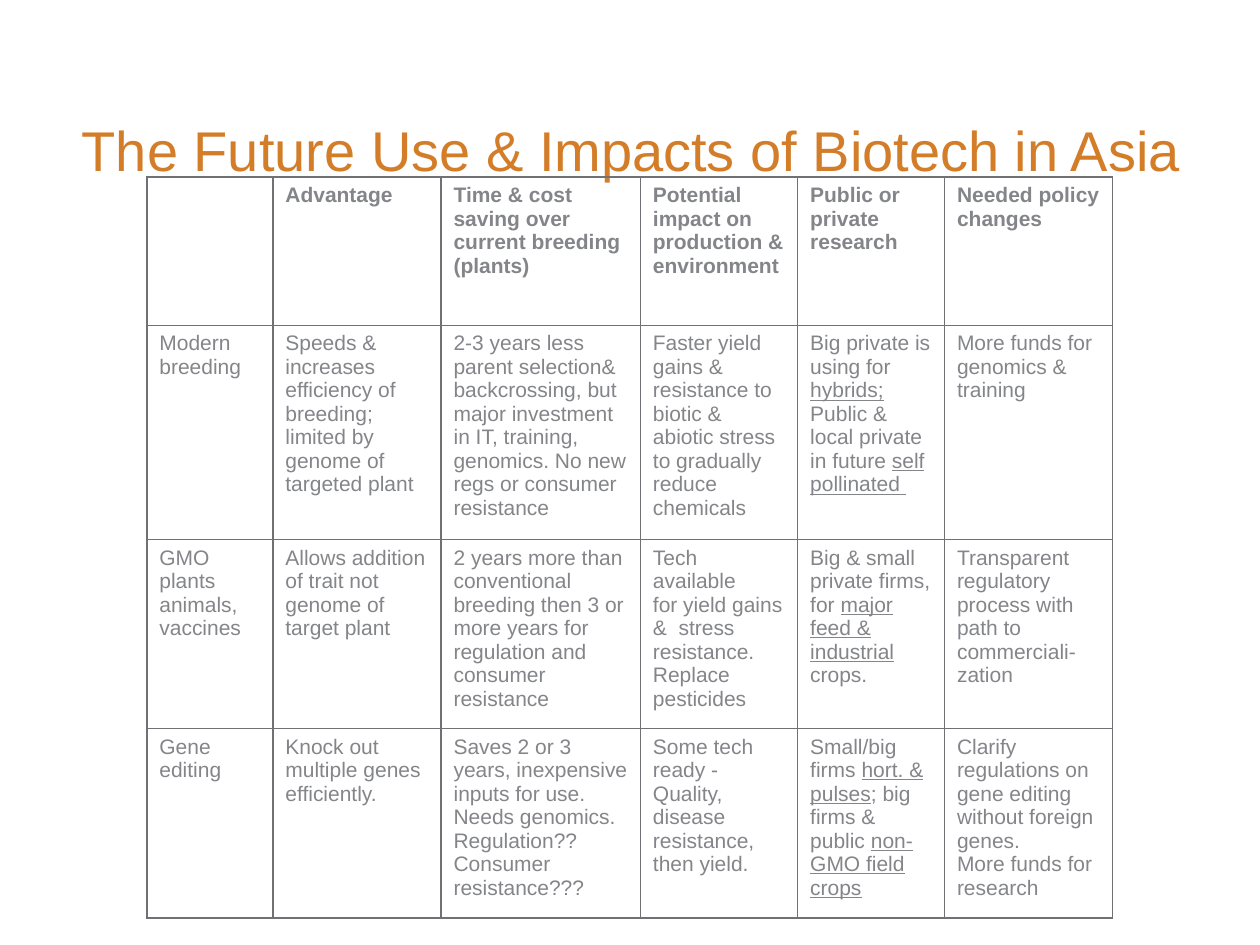
from pptx import Presentation
from pptx.dml.color import RGBColor
from pptx.enum.text import MSO_ANCHOR
from pptx.oxml import parse_xml
from pptx.oxml.ns import nsdecls
from pptx.util import Cm, Pt

MIDDLE = MSO_ANCHOR.MIDDLE
ORANGE = RGBColor(0xD3, 0x7D, 0x28)
GREY = RGBColor(0x84, 0x85, 0x89)
BORDER = RGBColor(0x70, 0x71, 0x74)
FONT = "Arial"

COLUMNS = [2.54, 3.39, 4.02, 3.17, 2.96, 3.39]
ROWS = [2.99, 3.94, 3.68, 2.72]
CELLS = [
    ["", "Advantage", "Time & cost saving over current breeding (plants)",
     "Potential impact on production & environment",
     "Public or private research", "Needed policy changes"],
    ["Modern breeding",
     "Speeds & increases efficiency of breeding; limited by genome of targeted plant",
     "2-3 years less parent selection& backcrossing, but major investment in IT, "
     "training, genomics. No new regs or consumer resistance",
     "Faster yield gains & resistance to biotic & abiotic stress to gradually reduce chemicals",
     "Big private is using for _hybrids;_ Public & local private in future _self pollinated _",
     "More funds for genomics & training"],
    ["GMO plants animals, vaccines",
     "Allows addition of trait not genome of target plant",
     "2 years more than conventional breeding then 3 or more years for regulation "
     "and consumer resistance",
     "Tech available\nfor yield gains &  stress resistance.\nReplace pesticides",
     "Big & small private firms,\nfor _major feed & industrial _crops.",
     "Transparent regulatory process with path to commerciali-zation"],
    ["Gene editing",
     "Knock out multiple genes efficiently.",
     "Saves 2 or 3 years, inexpensive inputs for use. Needs genomics.\n"
     "Regulation??\nConsumer resistance???",
     "Some tech ready - Quality, disease resistance, then yield.",
     "Small/big firms _hort. & pulses_; big firms & public _non-GMO field crops_",
     "Clarify regulations on gene editing without foreign genes.\nMore funds for research"],
]


class Deck:
    def __init__(self, width, height):
        self.prs = Presentation()
        self.prs.slide_width, self.prs.slide_height = Cm(width), Cm(height)
        self.s = self.prs.slides.add_slide(self.prs.slide_layouts[6])

    def text(self, tf, text, size, color, bold=False):
        for i, line in enumerate(text.split("\n")):
            p = tf.add_paragraph() if i else tf.paragraphs[0]
            p.font.size = Pt(size)
            for j, part in enumerate(line.split("_")):
                if not part:
                    continue
                r = p.add_run()
                r.text = part
                r.font.name = FONT
                r.font.size = Pt(size)
                r.font.bold = bold
                r.font.underline = j % 2 == 1
                r.font.color.rgb = color

    def title(self, text, left, top, width, height):
        sp = self.s.shapes.add_textbox(Cm(left), Cm(top), Cm(width), Cm(height))
        tf = sp.text_frame
        tf.word_wrap = True
        tf.vertical_anchor = MIDDLE
        tf.margin_bottom = 0
        self.text(tf, text, 32, ORANGE)

    def border(self, cell):
        tcPr = cell._tc.get_or_add_tcPr()
        for i, side in enumerate(("lnL", "lnR", "lnT", "lnB")):
            tcPr.insert(i, parse_xml(
                f'<a:{side} {nsdecls("a")} w="{Pt(1)}"><a:solidFill>'
                f'<a:srgbClr val="{BORDER}"/></a:solidFill></a:{side}>'))

    def table(self, cells, columns, rows, left, top):
        frame = self.s.shapes.add_table(
            len(rows), len(columns), Cm(left), Cm(top), Cm(sum(columns)), Cm(sum(rows)))
        tbl = frame.table
        tbl.horz_banding = False
        for col, width in zip(tbl.columns, columns):
            col.width = Cm(width)
        for i, (row, height) in enumerate(zip(tbl.rows, rows)):
            row.height = Cm(height)
            for cell, text in zip(row.cells, cells[i]):
                cell.fill.background()
                self.border(cell)
                self.text(cell.text_frame, text, 12, GREY, bold=i == 0)


def main():
    deck = Deck(25.4, 19.05)
    deck.title("The Future Use & Impacts of Biotech in Asia", 1.4, 2.11, 22.86, 1.65)
    deck.table(CELLS, COLUMNS, ROWS, 2.96, 3.57)
    deck.prs.save("out.pptx")


if __name__ == "__main__":
    main()
